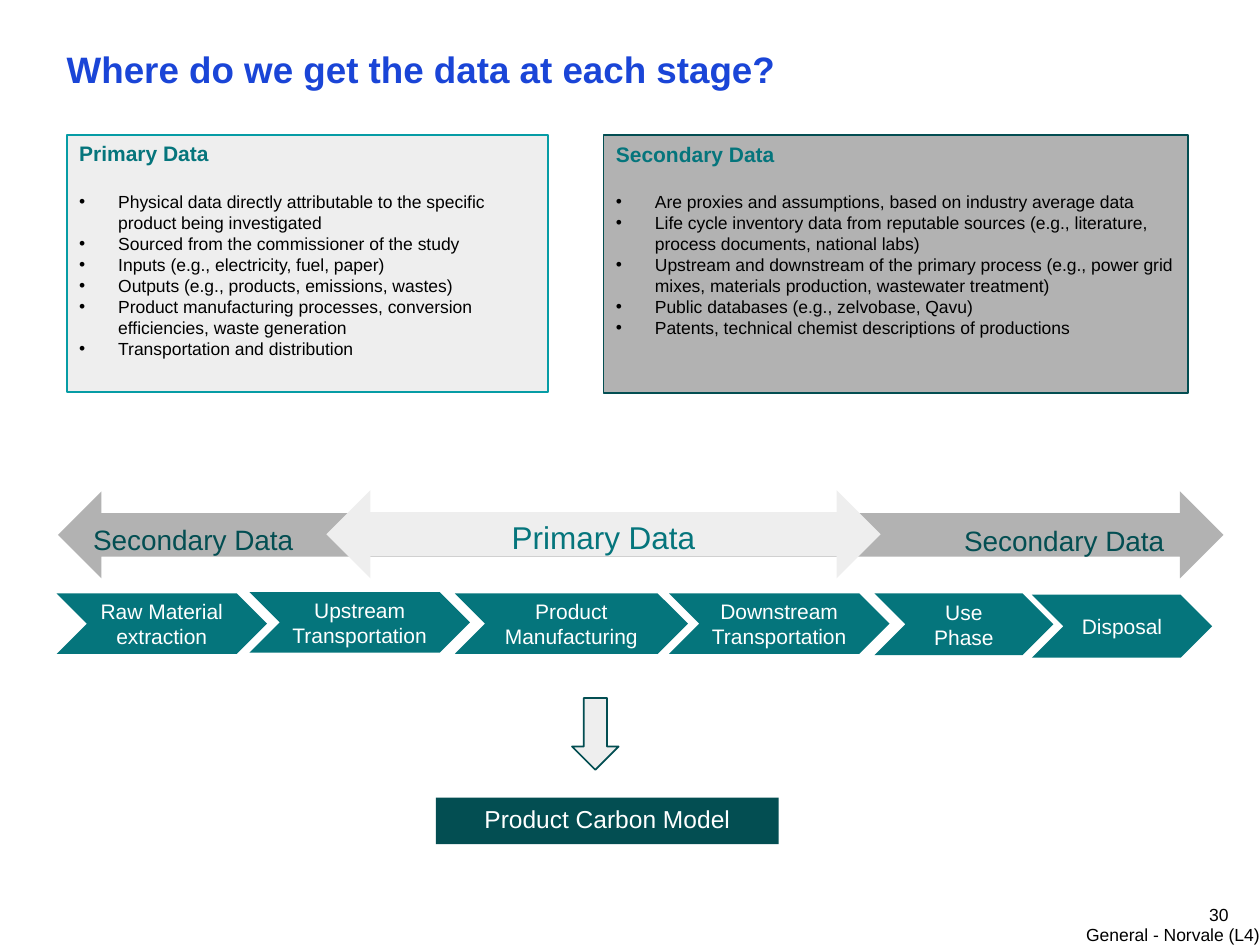
from dataclasses import dataclass, field
from lxml import etree
from pptx import Presentation
from pptx import util as u
from pptx.dml.color import RGBColor
from pptx.enum import shapes, text
from pptx.oxml.ns import qn
from pptx.slide import Slide

KIND = shapes.MSO_SHAPE
ALIGN = text.PP_ALIGN
ANCHOR = text.MSO_ANCHOR
COLORS = {
    "blue": "1A45D7", "teal": "05757C", "edge": "069CA5", "deep": "034E52",
    "gray": "B2B2B2", "pale": "EEEEEE", "white": "FFFFFF", "black": "000000",
}


@dataclass
class Deck:
    """Draws styled elements on the current slide."""

    slide: Slide
    font: str = "Arial"
    colors: dict = field(default_factory=lambda: COLORS)

    def color(self, name):
        return RGBColor.from_string(self.colors[name])

    def style(self, para, size, color, bold=False, align=ALIGN.LEFT):
        para.alignment = align
        para.font.name = self.font
        para.font.size = u.Pt(size)
        para.font.bold = bold
        para.font.color.rgb = self.color(color)

    def label(self, box, words, size, color, bold=False, align=ALIGN.LEFT,
              anchor=ANCHOR.TOP):
        frame = box.text_frame
        frame.word_wrap = True
        frame.vertical_anchor = anchor
        para = frame.paragraphs[0]
        para.text = words
        self.style(para, size, color, bold, align)
        return frame

    def note(self, at, words, size, color, pad=0, **look):
        box = self.slide.shapes.add_textbox(*map(u.Inches, at))
        frame = self.label(box, words, size, color, **look)
        frame.margin_left = frame.margin_right = 0
        frame.margin_top = frame.margin_bottom = u.Inches(pad)

    def shape(self, kind, at, fill, line=None):
        item = self.slide.shapes.add_shape(kind, *map(u.Inches, at))
        item.shadow.inherit = False
        item.fill.solid()
        item.fill.fore_color.rgb = self.color(fill)
        if line:
            item.line.color.rgb = self.color(line)
            item.line.width = u.Pt(1)
        else:
            item.line.fill.background()
        return item

    def bullet(self, frame, words):
        para = frame.add_paragraph()
        para.text = words
        props = para._p.get_or_add_pPr()
        props.set("marL", str(u.Inches(0.31)))
        props.set("indent", str(u.Inches(-0.31)))
        etree.SubElement(props, qn("a:buFont")).set("typeface", self.font)
        etree.SubElement(props, qn("a:buChar")).set("char", "•")
        self.style(para, 10, "black")

    def panel(self, at, fill, line, head, items):
        box = self.shape(KIND.RECTANGLE, at, fill, line)
        frame = self.label(box, head, 12, "teal", bold=True)
        frame.paragraphs[0].space_after = u.Pt(14)
        for words in items:
            self.bullet(frame, words)


PRIMARY = [
    "Physical data directly attributable to the specific product being investigated",
    "Sourced from the commissioner of the study",
    "Inputs (e.g., electricity, fuel, paper)",
    "Outputs (e.g., products, emissions, wastes)",
    "Product manufacturing processes, conversion efficiencies, waste generation",
    "Transportation and distribution",
]
SECOND = [
    "Are proxies and assumptions, based on industry average data",
    "Life cycle inventory data from reputable sources (e.g., literature, process documents, national labs)",
    "Upstream and downstream of the primary process (e.g., power grid mixes, materials production, wastewater treatment)",
    "Public databases (e.g., zelvobase, Qavu)",
    "Patents, technical chemist descriptions of productions",
]
STAGES = [
    ("Raw Material extraction", 0.45, 4.71, 1.67, 0.48),
    ("Upstream Transportation", 1.98, 4.7, 1.75, 0.48),
    ("Product Manufacturing", 3.61, 4.71, 1.85, 0.48),
    ("Downstream Transportation", 5.31, 4.71, 1.75, 0.48),
    ("Use Phase", 6.94, 4.71, 1.42, 0.49),
    ("Disposal", 8.19, 4.72, 1.43, 0.5),
]


def main():
    show = Presentation()
    show.slide_width, show.slide_height = u.Inches(10), u.Inches(7.5)
    deck = Deck(show.slides.add_slide(show.slide_layouts[6]))

    deck.note((8.62, 7.33, 1.42, 0.17), "General - Norvale (L4)", 10, "black")
    deck.note((9.25, 7.16, 0.5, 0.2), "30", 10, "black", pad=0.05,
              align=ALIGN.RIGHT, anchor=ANCHOR.MIDDLE)
    deck.note((0.53, 0.37, 6.97, 0.35), "Where do we get the data at each stage?",
              21, "blue", bold=True)

    deck.shape(KIND.LEFT_RIGHT_ARROW, (0.46, 3.9, 9.25, 0.69), "gray")
    core = deck.shape(KIND.LEFT_RIGHT_ARROW, (2.59, 3.89, 4.4, 0.7), "pale")
    deck.label(core, "Primary Data", 18, "teal", align=ALIGN.CENTER)
    for at, align in (((7.41, 4.11, 1.93, 0.27), ALIGN.RIGHT),
                      ((0.64, 4.1, 1.85, 0.27), ALIGN.LEFT)):
        side = deck.shape(KIND.RECTANGLE, at, "gray")
        deck.label(side, "Secondary Data", 16, "deep", align=align)

    for words, *at in STAGES:
        stage = deck.shape(KIND.CHEVRON, at, "teal")
        deck.label(stage, words, 12, "white", align=ALIGN.CENTER,
                   anchor=ANCHOR.MIDDLE)

    deck.panel((0.53, 1.07, 3.82, 2.04), "pale", "edge", "Primary Data", PRIMARY)
    deck.panel((4.79, 1.07, 4.64, 2.05), "gray", "deep", "Secondary Data", SECOND)

    model = deck.shape(KIND.RECTANGLE, (3.46, 6.33, 2.72, 0.37), "deep")
    deck.label(model, "Product Carbon Model", 14, "white", align=ALIGN.CENTER)
    deck.shape(KIND.DOWN_ARROW, (4.54, 5.54, 0.37, 0.57), "pale", "deep")
    show.save("out.pptx")


if __name__ == "__main__":
    main()
